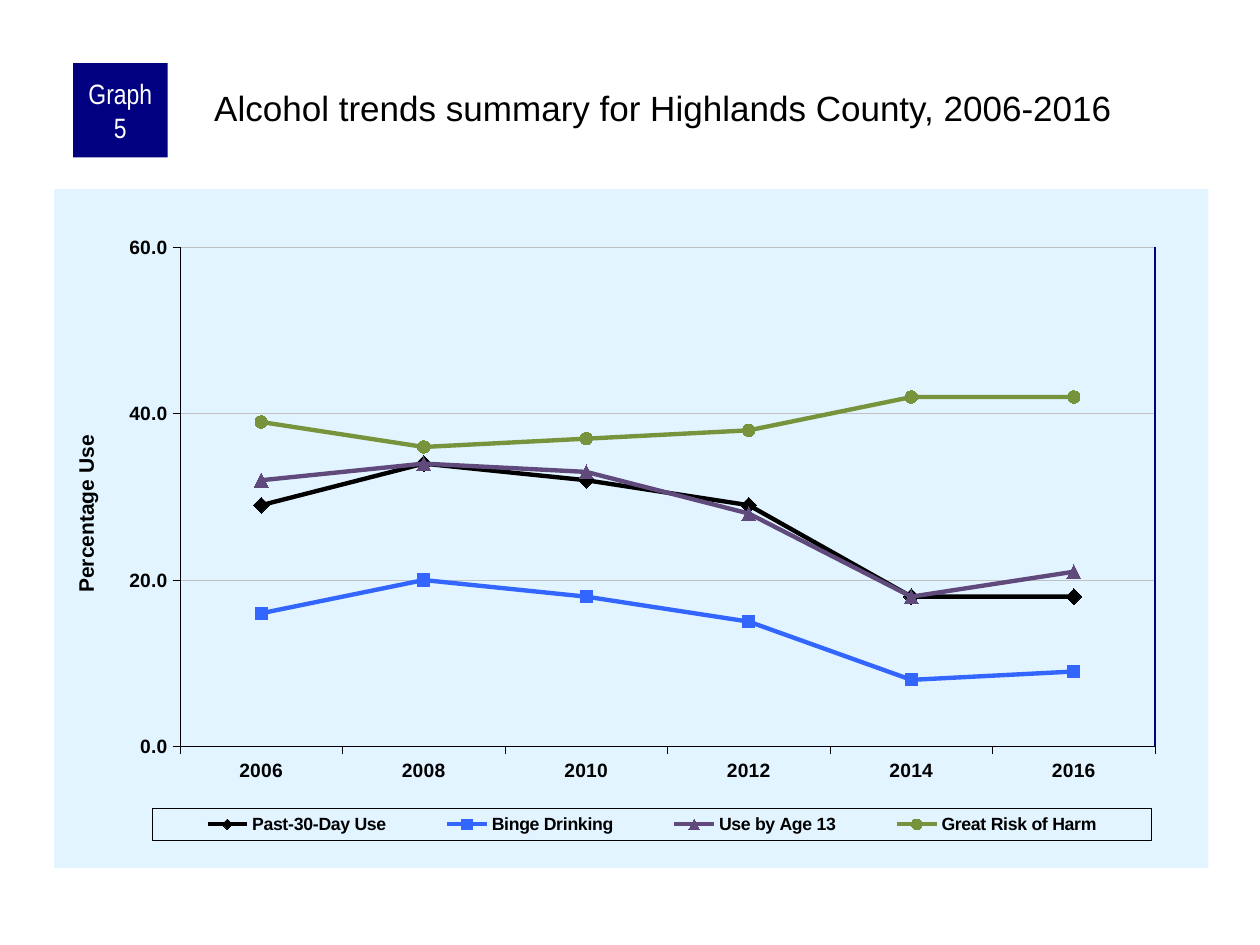
from lxml import etree
from pptx import Presentation
from pptx.chart.data import CategoryChartData
from pptx.dml.color import RGBColor
from pptx.enum.chart import XL_CHART_TYPE as ChartType, XL_LEGEND_POSITION as LegendPosition
from pptx.enum.chart import XL_MARKER_STYLE as Marker, XL_TICK_MARK as TickMark
from pptx.enum.shapes import MSO_CONNECTOR as Connector, MSO_SHAPE as Shape
from pptx.enum.text import MSO_ANCHOR as Anchor, PP_ALIGN as Align
from pptx.oxml import parse_xml
from pptx.oxml.ns import nsdecls, qn
from pptx.util import Inches, Pt


def paint(color, value):
    color.rgb = RGBColor.from_string(value)


def set_layout(parent, previous, **values):
    """Give a chart part a manual layout, as fractions of the chart."""
    for old in parent.findall(qn("c:layout")):
        parent.remove(old)
    layout = etree.Element(qn("c:layout"))
    manual = etree.SubElement(layout, qn("c:manualLayout"))
    for tag, value in values.items():
        etree.SubElement(manual, qn(f"c:{tag}"), val=str(value))
    if previous is None:
        parent.insert(0, layout)
    else:
        previous.addnext(layout)


deck = Presentation()
deck.slide_width, deck.slide_height = Inches(10), Inches(7.5)
page = deck.slides.add_slide(deck.slide_layouts[5])

# Title and graph number
title = page.shapes.title
title.left, title.top, title.width, title.height = map(Inches, (1.67, 0.66, 7.92, 0.83))
badge = page.shapes.add_shape(Shape.RECTANGLE, Inches(0.58), Inches(0.5), Inches(0.75), Inches(0.75))
badge.shadow.inherit = False
badge.fill.solid()
paint(badge.fill.fore_color, "000080")
badge.line.fill.background()

labels = [
    (title, "Alcohol trends summary for Highlands County, 2006-2016", Align.LEFT, "Arial", 20, "000000",
     dict(margin_left=Inches(0.03), margin_top=Inches(0.03), margin_right=0, margin_bottom=0,
          vertical_anchor=Anchor.TOP, word_wrap=True)),
    (badge, "Graph 5", Align.CENTER, "Arial Narrow", 16, "FFFFFF",
     dict(margin_left=Inches(0.05), margin_top=0, margin_right=Inches(0.05), margin_bottom=0,
          vertical_anchor=Anchor.MIDDLE, word_wrap=True)),
]
for box, text, align, font_name, size, color, frame_format in labels:
    for name, value in frame_format.items():
        setattr(box.text_frame, name, value)
    para = box.text_frame.paragraphs[0]
    para.alignment = align
    span = para.add_run()
    span.text = text
    span.font.name, span.font.size = font_name, Pt(size)
    paint(span.font.color, color)

# Chart data
trends = [
    ("Past-30-Day Use", (29, 34, 32, 29, 18, 18), "000000", Marker.DIAMOND, 9),
    ("Binge Drinking", (16, 20, 18, 15, 8, 9), "3366FF", Marker.SQUARE, 7),
    ("Use by Age 13", (32, 34, 33, 28, 18, 21), "604A7B", Marker.TRIANGLE, 8),
    ("Great Risk of Harm", (39, 36, 37, 38, 42, 42), "77933C", Marker.CIRCLE, 7),
]
data = CategoryChartData(number_format="0.0")
data.categories = [str(year) for year in range(2006, 2017, 2)]
for name, values, *_ in trends:
    data.add_series(name, values)
chart = page.shapes.add_chart(ChartType.LINE_MARKERS, Inches(0.43), Inches(1.5),
                              Inches(9.16), Inches(5.39), data).chart
chart.has_title = False
chart.has_legend = True
legend = chart.legend
legend.position = LegendPosition.BOTTOM
legend.include_in_layout = False

# Series lines and markers
for series, (_, _, color, marker, size) in zip(chart.plots[0].series, trends):
    series.smooth = False
    series.format.line.width = Pt(2.5)
    paint(series.format.line.color, color)
    series.marker.style, series.marker.size = marker, size
    series.marker.format.fill.solid()
    paint(series.marker.format.fill.fore_color, color)
    paint(series.marker.format.line.color, color)

# Axes
years, percent = chart.category_axis, chart.value_axis
for axis in (years, percent):
    axis.major_tick_mark, axis.minor_tick_mark = TickMark.OUTSIDE, TickMark.NONE
    axis.format.line.width = Pt(0.25)
    paint(axis.format.line.color, "000000")
scale = dict(minimum_scale=0, maximum_scale=60, major_unit=20, has_major_gridlines=True, has_title=True)
for name, value in scale.items():
    setattr(percent, name, value)
percent.tick_labels.number_format = "0.0"
percent.tick_labels.number_format_is_linked = False
percent.major_gridlines.format.line.width = Pt(0.25)
paint(percent.major_gridlines.format.line.color, "C0C0C0")
axis_title = percent.axis_title.text_frame
axis_title.text = "Percentage Use"
axis_title._txBody.bodyPr.set("rot", "-5400000")

# Chart fonts
fonts = [(chart.font, 8, False), (years.tick_labels.font, 11, True), (percent.tick_labels.font, 11, True),
         (legend.font, 10.1, True), (axis_title.paragraphs[0].runs[0].font, 12, True)]
for font, size, bold in fonts:
    font.name, font.size, font.bold = "Arial", Pt(size), bold
    paint(font.color, "000000")

# Chart background and legend border
space = chart._chartSpace
space.find(qn("c:chart")).addnext(parse_xml(
    f'<c:spPr {nsdecls("c", "a")}><a:solidFill><a:srgbClr val="E1F4FF"/></a:solidFill>'
    '<a:ln><a:noFill/></a:ln></c:spPr>'))
legend_part = legend._element
legend_part.find(qn("c:overlay")).addnext(parse_xml(
    f'<c:spPr {nsdecls("c", "a")}><a:noFill/><a:ln w="3175"><a:solidFill>'
    '<a:srgbClr val="000000"/></a:solidFill></a:ln></c:spPr>'))

# Places of plot, legend and axis title
edges = dict(xMode="edge", yMode="edge")
set_layout(space.find(f'{qn("c:chart")}/{qn("c:plotArea")}'), None,
           layoutTarget="inner", **edges, x=0.109, y=0.086, w=0.845, h=0.735)
set_layout(legend_part, legend_part.find(qn("c:legendPos")), **edges, x=0.085, y=0.912, w=0.866, h=0.047)
title_part = percent.axis_title._element
set_layout(title_part, title_part.find(qn("c:tx")), **edges, x=0.013, y=0.357)

# Right edge of the plot
edge = page.shapes.add_connector(Connector.STRAIGHT, Inches(9.17), Inches(1.96), Inches(9.17), Inches(5.92))
edge.line.width = Pt(1.25)
paint(edge.line.color, "000080")
etree.SubElement(edge._element.spPr, qn("a:effectLst"))

deck.save("out.pptx")
